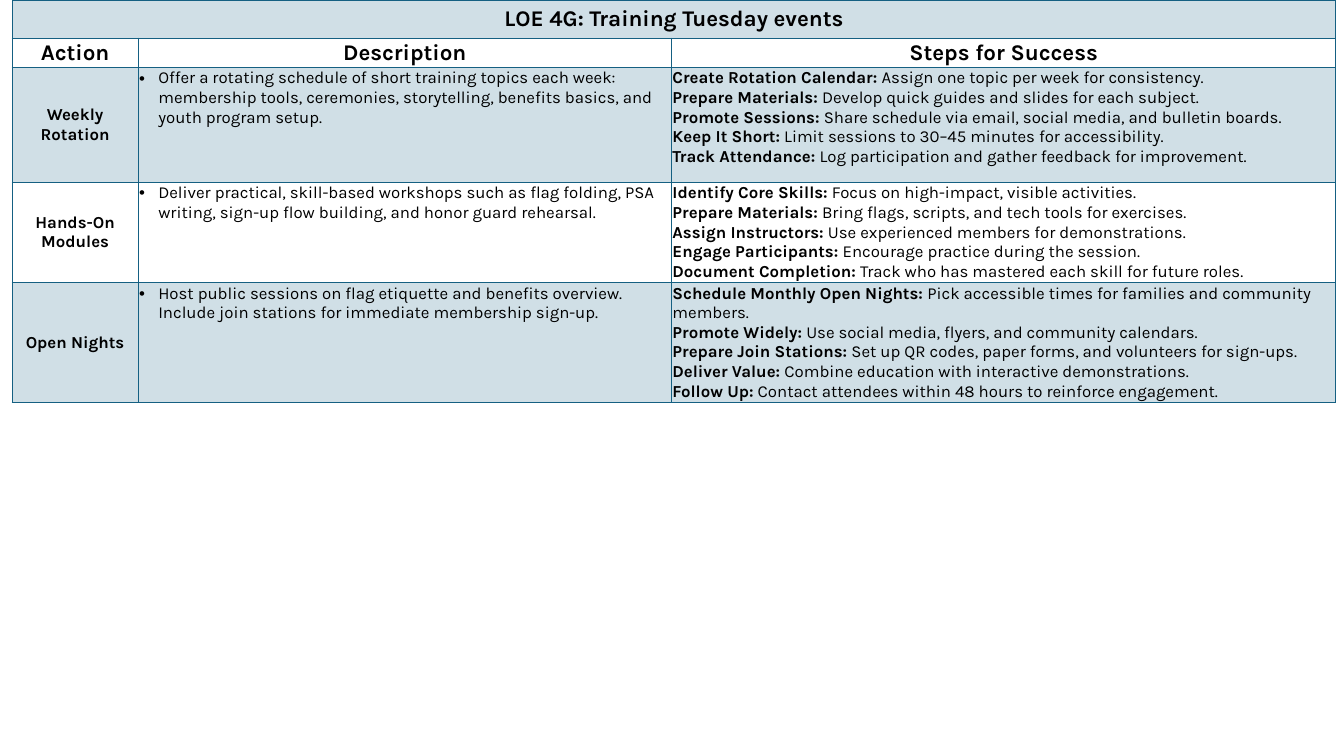
from lxml import etree
from pptx import Presentation
from pptx import util as u
from pptx.dml.color import RGBColor
from pptx.enum import text
from pptx.oxml.ns import qn

BLUE, BLACK = "156082", "000000"
TITLE = "LOE 4G: Training Tuesday events"
HEADINGS = ["Action", "Description", "Steps for Success"]
COL_WIDTHS = [1.25, 5.29, 6.59]
ROW_HEIGHTS = [0.38, 0.29, 1.14, 0.95, 0.95]
ACTIONS = [
    ("Weekly Rotation",
     "Offer a rotating schedule of short training topics each week: membership tools, "
     "ceremonies, storytelling, benefits basics, and youth program setup.",
     [("Create Rotation Calendar:", "Assign one topic per week for consistency."),
      ("Prepare Materials:", "Develop quick guides and slides for each subject."),
      ("Promote Sessions:", "Share schedule via email, social media, and bulletin boards."),
      ("Keep It Short:", "Limit sessions to 30–45 minutes for accessibility."),
      ("Track Attendance:", "Log participation and gather feedback for improvement.")]),
    ("Hands-On Modules",
     "Deliver practical, skill-based workshops such as flag folding, PSA writing, "
     "sign-up flow building, and honor guard rehearsal.",
     [("Identify Core Skills:", "Focus on high-impact, visible activities."),
      ("Prepare Materials:", "Bring flags, scripts, and tech tools for exercises."),
      ("Assign Instructors:", "Use experienced members for demonstrations."),
      ("Engage Participants:", "Encourage practice during the session."),
      ("Document Completion:", "Track who has mastered each skill for future roles.")]),
    ("Open Nights",
     "Host public sessions on flag etiquette and benefits overview. "
     "Include join stations for immediate membership sign-up.",
     [("Schedule Monthly Open Nights:",
       "Pick accessible times for families and community members."),
      ("Promote Widely:", "Use social media, flyers, and community calendars."),
      ("Prepare Join Stations:", "Set up QR codes, paper forms, and volunteers for sign-ups."),
      ("Deliver Value:", "Combine education with interactive demonstrations."),
      ("Follow Up:", "Contact attendees within 48 hours to reinforce engagement.")]),
]


def rgb(color):
    return RGBColor.from_string(color)


def set_attrs(obj, values):
    for name, value in values.items():
        setattr(obj, name, value)


def add_run(p, words, size, bold):
    r = p.add_run()
    r.text = words
    set_attrs(r.font, {"name": "Karla", "size": u.Pt(size), "bold": bold})
    r.font.color.rgb = rgb(BLACK)


def add_border(cell):
    tcPr = cell._tc.get_or_add_tcPr()
    for i, side in enumerate(("lnL", "lnR", "lnT", "lnB")):
        ln = etree.Element(qn(f"a:{side}"), w=str(u.Pt(1)))
        fill = etree.SubElement(ln, qn("a:solidFill"))
        etree.SubElement(fill, qn("a:srgbClr"), val=BLUE)
        tcPr.insert(i, ln)


def format_cell(cell, shaded):
    margin = u.Inches(0.01)
    set_attrs(cell, {f"margin_{side}": margin for side in ("left", "right", "top", "bottom")})
    if shaded:
        cell.fill.solid()
        cell.fill.fore_color.rgb = rgb(BLUE)
        color = cell._tc.tcPr.find(f"{qn('a:solidFill')}/{qn('a:srgbClr')}")
        etree.SubElement(color, qn("a:alpha"), val="20000")
    else:
        cell.fill.background()
    add_border(cell)


def write_label(cell, words, size):
    cell.vertical_anchor = text.MSO_ANCHOR.MIDDLE
    p = cell.text_frame.paragraphs[0]
    p.alignment = text.PP_ALIGN.CENTER
    add_run(p, words, size, True)


def write_bullet(cell, words):
    p = cell.text_frame.paragraphs[0]
    pPr = p._p.get_or_add_pPr()
    indent = u.Inches(0.19)
    pPr.set("marL", str(indent))
    pPr.set("indent", str(-indent))
    etree.SubElement(pPr, qn("a:buFont"), typeface="Arial")
    etree.SubElement(pPr, qn("a:buChar"), char="•")
    add_run(p, words, 12, False)


def write_steps(cell, steps):
    tf = cell.text_frame
    for i, (name, detail) in enumerate(steps):
        p = tf.add_paragraph() if i else tf.paragraphs[0]
        add_run(p, name, 12, True)
        add_run(p, f" {detail}", 12, False)


def add_plan_table(s):
    frame = s.shapes.add_table(len(ROW_HEIGHTS), len(COL_WIDTHS), u.Inches(0.12), 0,
                               u.Inches(sum(COL_WIDTHS)), u.Inches(sum(ROW_HEIGHTS)))
    table = frame.table
    set_attrs(table, {"first_row": False, "horz_banding": False})
    for column, width in zip(table.columns, COL_WIDTHS):
        column.width = u.Inches(width)
    for i, (row, height) in enumerate(zip(table.rows, ROW_HEIGHTS)):
        row.height = u.Inches(height)
        for cell in row.cells:
            format_cell(cell, shaded=i % 2 == 0)
    return table


def main():
    prs = Presentation()
    set_attrs(prs, {"slide_width": u.Inches(13.33), "slide_height": u.Inches(7.5)})
    s = prs.slides.add_slide(prs.slide_layouts[6])
    table = add_plan_table(s)
    table.cell(0, 0).merge(table.cell(0, 2))
    write_label(table.cell(0, 0), TITLE, 16)
    for i, heading in enumerate(HEADINGS):
        write_label(table.cell(1, i), heading, 16)
    for i, (action, description, steps) in enumerate(ACTIONS, start=2):
        write_label(table.cell(i, 0), action, 12)
        write_bullet(table.cell(i, 1), description)
        write_steps(table.cell(i, 2), steps)
    prs.save("out.pptx")


if __name__ == "__main__":
    main()
